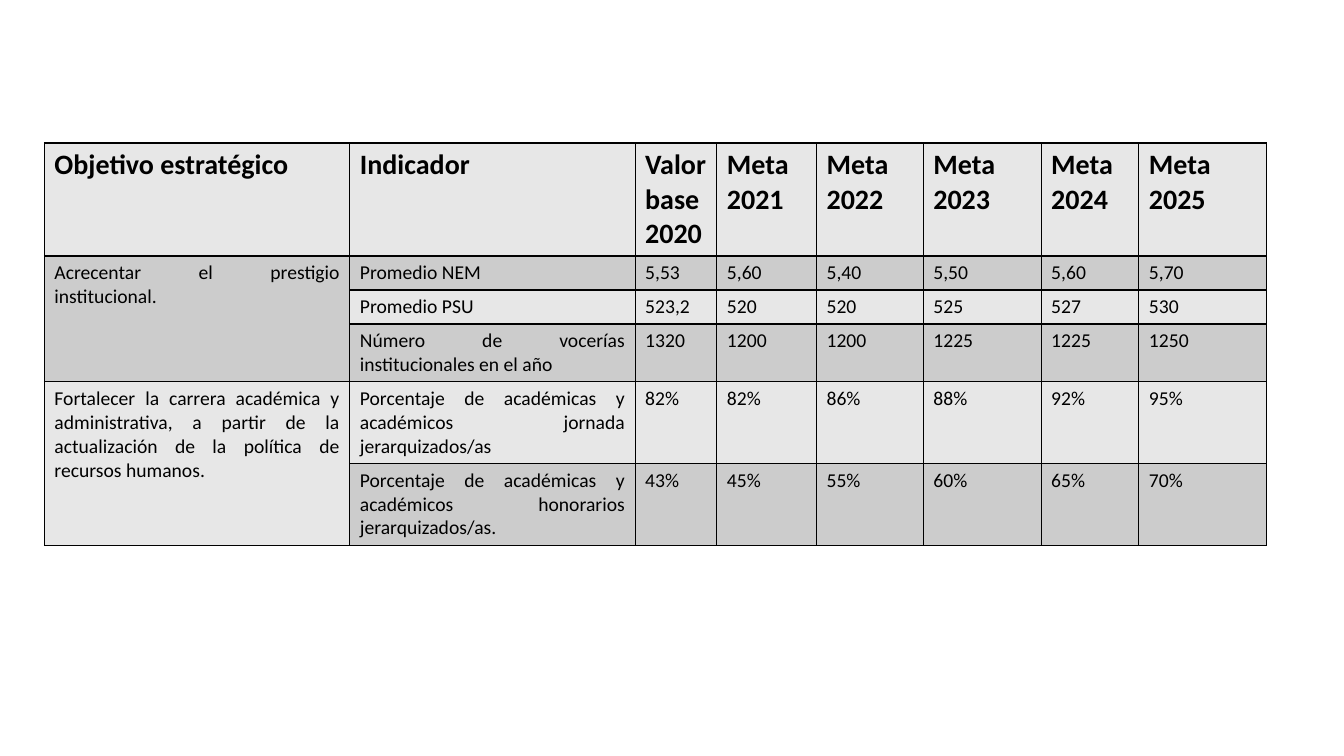
from pptx import Presentation
from pptx.util import Pt
from pptx.dml.color import RGBColor
from pptx.enum import text as t
from pptx.oxml import parse_xml
from pptx.oxml.ns import nsdecls

BLACK = RGBColor(0, 0, 0)
LIGHT = RGBColor(0xE7, 0xE7, 0xE7)
DARK = RGBColor(0xCC, 0xCC, 0xCC)
FONT = "Calibri"
HEAD = ["Objetivo estratégico", "Indicador", "Valor base 2020"] + [
    f"Meta {year}" for year in range(2021, 2026)]
GOALS = [
    ("Acrecentar el prestigio institucional.", [
        ("Promedio NEM", "5,53 5,60 5,40 5,50 5,60 5,70"),
        ("Promedio PSU", "523,2 520 520 525 527 530"),
        ("Número de vocerías institucionales en el año",
         "1320 1200 1200 1225 1225 1250"),
    ]),
    ("Fortalecer la carrera académica y administrativa, a partir de la "
     "actualización de la política de recursos humanos.", [
        ("Porcentaje de académicas y académicos jornada jerarquizados/as",
         "82% 82% 86% 88% 92% 95%"),
        ("Porcentaje de académicas y académicos honorarios jerarquizados/as.",
         "43% 45% 55% 60% 65% 70%"),
    ]),
]
WIDTHS = [218.2, 203.8, 58.4, 71.2, 76.3, 84.2, 69.8, 91.4]
HEIGHTS = [80.5, 24, 24, 40.5, 57, 57]


def frame(cell):
    """Draw a thin black border on every side of a cell."""
    props = cell._tc.get_or_add_tcPr()
    for spot, side in enumerate(("lnL", "lnR", "lnT", "lnB")):
        props.insert(spot, parse_xml(
            f'<a:{side} {nsdecls("a")} w="{Pt(1)}"><a:solidFill>'
            f'<a:srgbClr val="{BLACK}"/></a:solidFill></a:{side}>'))


def write(cell, words, size, bold=False, align=None):
    """Put one run of text in a cell."""
    para = cell.text_frame.paragraphs[0]
    para.alignment = align
    run = para.add_run()
    run.text = words
    run.font.name = FONT
    run.font.size = Pt(size)
    run.font.bold = bold
    run.font.color.rgb = BLACK


def goals(slide, left, top):
    """Build the table of goals at the given corner."""
    shape = slide.shapes.add_table(
        len(HEIGHTS), len(WIDTHS), Pt(left), Pt(top),
        Pt(sum(WIDTHS)), Pt(sum(HEIGHTS)))
    table = shape.table
    for col, width in zip(table.columns, WIDTHS):
        col.width = Pt(width)
    for num, (row, height) in enumerate(zip(table.rows, HEIGHTS)):
        row.height = Pt(height)
        for cell in row.cells:
            cell.fill.solid()
            cell.fill.fore_color.rgb = DARK if num % 2 else LIGHT
            frame(cell)
    for col, words in enumerate(HEAD):
        write(table.cell(0, col), words, 20, True)
    row = 1
    for goal, items in GOALS:
        first = table.cell(row, 0)
        first.merge(table.cell(row + len(items) - 1, 0))
        write(first, goal, 14, align=t.PP_ALIGN.JUSTIFY)
        for label, values in items:
            write(table.cell(row, 1), label, 14, align=t.PP_ALIGN.JUSTIFY)
            for col, value in enumerate(values.split(), 2):
                write(table.cell(row, col), value, 14)
            row += 1


def main():
    """Build and save the slide."""
    deck = Presentation()
    deck.slide_width, deck.slide_height = Pt(960), Pt(540)
    slide = deck.slides.add_slide(deck.slide_layouts[6])
    goals(slide, 31.7, 102.2)
    deck.save("out.pptx")


if __name__ == "__main__":
    main()
